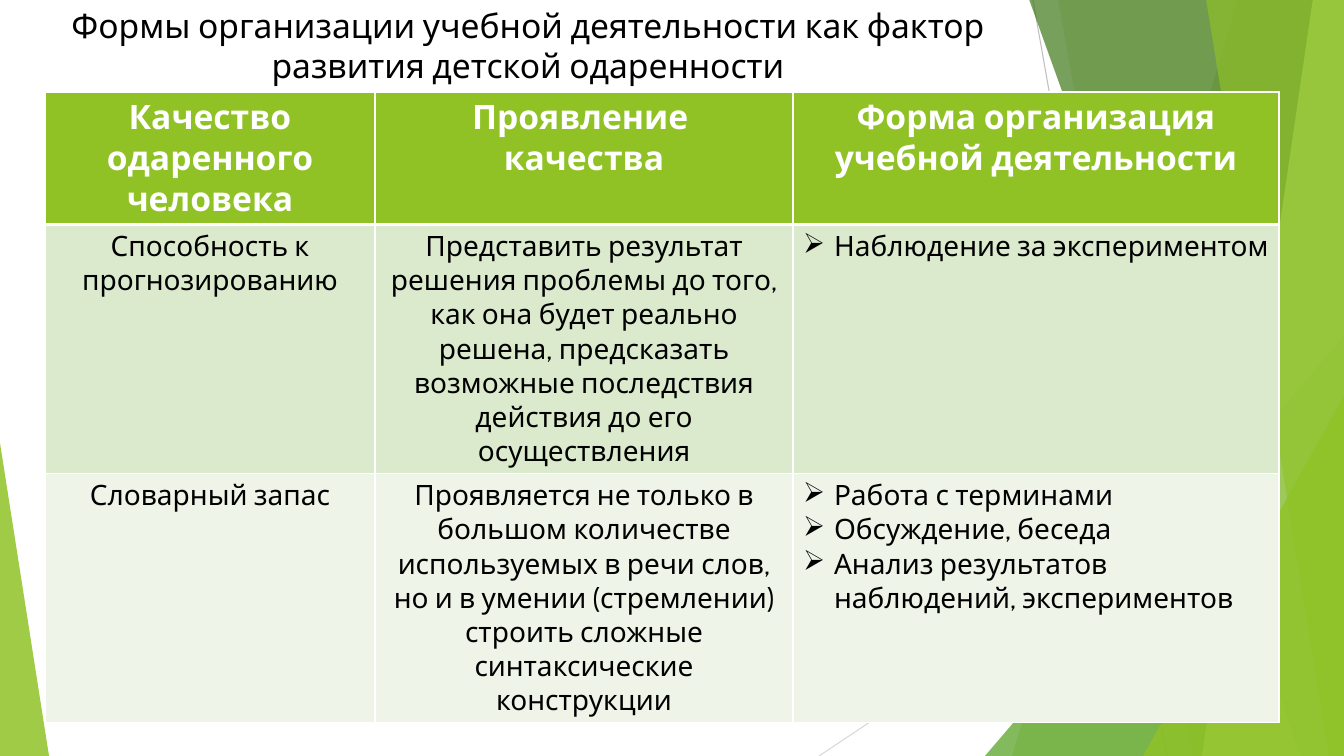
from lxml import etree
from pptx import Presentation
from pptx import util as u
from pptx.dml.color import RGBColor
from pptx.enum import shapes, text
from pptx.oxml import ns

EMU_PER_PX = 914400 / 100.8
WIDTH, HEIGHT = 1344, 756
FONT = "Cabin"
BULLET = "➢"
COLORS = {
    "green": "90C226", "leaf": "54A021", "forest": "3F7819", "lime": "C0E474",
    "gray": "BFBFBF", "light gray": "D9D9D9", "white": "FFFFFF", "black": "000000",
    "odd row": "DBE9CD", "even row": "EEF4E8",
}

TITLE = "Формы организации учебной деятельности как фактор развития детской одаренности"
COLUMN_WIDTHS = [330, 418, 486]
ROW_HEIGHTS = [130, 245, 247]
ROW_FILLS = ["green", "odd row", "even row"]
ROWS = [
    [["Качество одаренного человека"],
     ["Проявление ", "качества"],
     ["Форма организация учебной деятельности"]],
    [["Способность к прогнозированию"],
     ["Представить результат решения проблемы до того, как она будет реально решена, "
      "предсказать возможные последствия действия до его осуществления"],
     ["Наблюдение за экспериментом"]],
    [["Словарный запас"],
     ["Проявляется не только в большом количестве используемых в речи слов, "
      "но и в умении (стремлении) строить сложные синтаксические конструкции"],
     ["Работа с терминами", "Обсуждение, беседа",
      "Анализ результатов наблюдений, экспериментов"]],
]

# Bands reach the right edge: top x, bottom x, colour, opacity in percent
BACK_BANDS = [(1238, 1012, "green", 30), (1058, 1192, "green", 20)]
FRONT_BANDS = [(1029, 1301, "forest", 70), (1313, 1202, "lime", 70), (1206, 1329, "green", 65)]


def px(value):
    return u.Emu(round(value * EMU_PER_PX))


def rgb(name):
    return RGBColor.from_string(COLORS[name])


def add_child(parent, tag, **attributes):
    return etree.SubElement(parent, ns.qn(tag), attributes)


def paint(shape, color, opacity):
    """Fill with a translucent colour, without outline or shadow."""
    shape.shadow.inherit = False
    shape.line.fill.background()
    shape.fill.solid()
    shape.fill.fore_color.rgb = rgb(color)
    srgb = shape.fill._xPr.find(".//" + ns.qn("a:srgbClr"))
    add_child(srgb, "a:alpha", val=str(opacity * 1000))


def add_line(slide, start, end, color):
    line = slide.shapes.add_connector(
        shapes.MSO_CONNECTOR.STRAIGHT, *map(px, start + end))
    line.line.color.rgb = rgb(color)
    line.line.width = u.Pt(0.75)
    add_child(line._element.spPr, "a:effectLst")


def add_band(slide, top_x, bottom_x, color, opacity):
    builder = slide.shapes.build_freeform(top_x, -1, scale=EMU_PER_PX)
    builder.add_line_segments([(WIDTH, -1), (WIDTH, HEIGHT), (bottom_x, HEIGHT)])
    paint(builder.convert_to_shape(), color, opacity)


def add_corner(slide, left, top, width, apex, color, opacity):
    """Add a right triangle standing on the bottom edge."""
    shape = slide.shapes.add_shape(
        shapes.MSO_SHAPE.ISOSCELES_TRIANGLE, *map(px, (left, top, width, HEIGHT - top)))
    shape.adjustments[0] = apex
    paint(shape, color, opacity)


def add_backdrop(slide):
    add_line(slide, (1033, 0), (1167, HEIGHT), "gray")
    add_line(slide, (WIDTH, 406), (819, HEIGHT), "light gray")
    for band in BACK_BANDS:
        add_band(slide, *band)
    add_corner(slide, 985, 336, 359, 1, "leaf", 72)
    for band in FRONT_BANDS:
        add_band(slide, *band)
    add_corner(slide, 1143, 396, 201, 1, "green", 80)
    add_corner(slide, 0, 443, 49, 0, "green", 85)


def write(frame, lines, size, color, bold=False, bulleted=False):
    frame.text = "\n".join(lines)
    for paragraph in frame.paragraphs:
        paragraph.alignment = text.PP_ALIGN.LEFT if bulleted else text.PP_ALIGN.CENTER
        font = paragraph.runs[0].font
        for name, value in {"name": FONT, "size": u.Pt(size), "bold": bold}.items():
            setattr(font, name, value)
        font.color.rgb = rgb(color)
        if bulleted:
            properties = paragraph._p.get_or_add_pPr()
            properties.set("marL", str(px(31)))
            properties.set("indent", str(-px(31)))
            add_child(properties, "a:buChar", char=BULLET)


def set_title(slide):
    title = slide.shapes.title
    box = {"left": 10, "top": 0, "width": 1036, "height": 92}
    for name, value in box.items():
        setattr(title, name, px(value))
    frame = title.text_frame
    settings = {"word_wrap": True, "auto_size": text.MSO_AUTO_SIZE.NONE,
                "vertical_anchor": text.MSO_ANCHOR.TOP}
    for name, value in settings.items():
        setattr(frame, name, value)
    write(frame, [TITLE], 24, "black")


def set_borders(cell, widths):
    """Draw white borders; widths are points for left, right, top, bottom."""
    properties = cell._tc.get_or_add_tcPr()
    for index, (side, width) in enumerate(zip("LRTB", widths)):
        line = add_child(properties, "a:ln" + side, w=str(u.Pt(width)))
        add_child(add_child(line, "a:solidFill"), "a:srgbClr", val=COLORS["white"])
        properties.insert(index, line)


def add_quality_table(slide):
    frame = slide.shapes.add_table(
        len(ROWS), len(COLUMN_WIDTHS),
        *map(px, (45, 92, sum(COLUMN_WIDTHS), sum(ROW_HEIGHTS))))
    table = frame.table
    table.horz_banding = False
    for column, width in zip(table.columns, COLUMN_WIDTHS):
        column.width = px(width)
    for r, (row, height) in enumerate(zip(table.rows, ROW_HEIGHTS)):
        row.height = px(height)
        header = r == 0
        for c, cell in enumerate(row.cells):
            cell.fill.solid()
            cell.fill.fore_color.rgb = rgb(ROW_FILLS[r])
            set_borders(cell, (1, 1, 3 if r == 1 else 1, 3 if header else 1))
            write(cell.text_frame, ROWS[r][c], 24 if header else 20,
                  "white" if header else "black", bold=header,
                  bulleted=not header and c == 2)


def main():
    presentation = Presentation()
    presentation.slide_width, presentation.slide_height = px(WIDTH), px(HEIGHT)
    slide = presentation.slides.add_slide(presentation.slide_layouts.get_by_name("Title Only"))
    add_backdrop(slide)
    set_title(slide)
    add_quality_table(slide)
    presentation.save("out.pptx")


if __name__ == "__main__":
    main()
